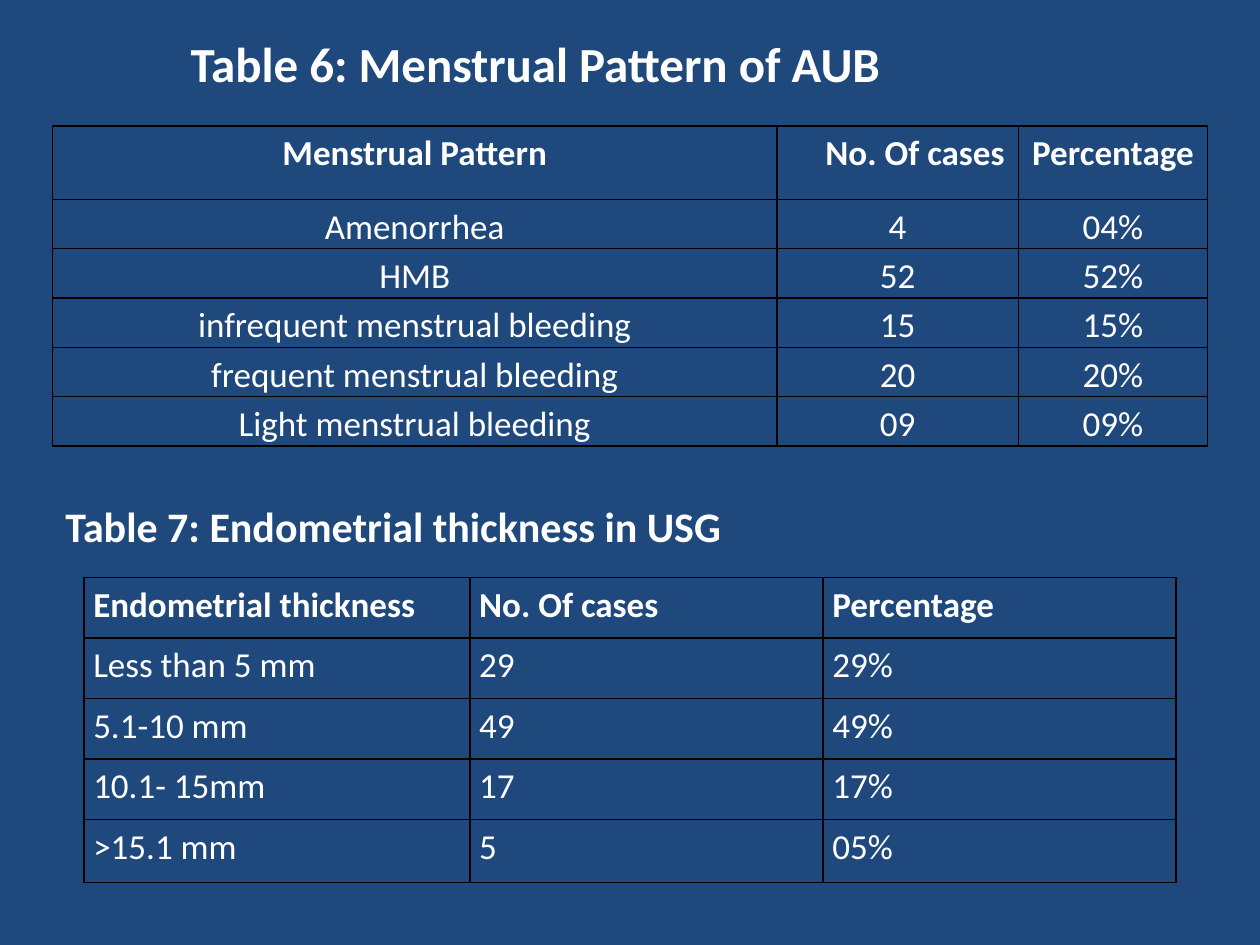
from lxml.etree import SubElement
from pptx import Presentation
from pptx.dml.color import RGBColor
from pptx.enum.text import MSO_ANCHOR, PP_ALIGN
from pptx.oxml.ns import qn
from pptx.util import Cm, Pt

HUES = {"back": "1F497D", "text": "FFFFFF", "line": "000000"}
FONT = "Calibri"
MARGINS = {"margin_left": Cm(0.19), "margin_right": Cm(0.19),
           "margin_top": 0, "margin_bottom": 0}
PATTERN = [
    ("Menstrual Pattern", "No. Of cases", "Percentage"),
    ("Amenorrhea", "4", "04%"),
    ("HMB", "52", "52%"),
    ("infrequent menstrual bleeding", "15", "15%"),
    ("frequent menstrual bleeding", "20", "20%"),
    ("Light menstrual bleeding", "09", "09%"),
]
THICKNESS = [
    ("Endometrial thickness", "No. Of cases", "Percentage"),
    ("Less than 5 mm", "29", "29%"),
    ("5.1-10 mm", "49", "49%"),
    ("10.1- 15mm", "17", "17%"),
    (">15.1 mm", "5", "05%"),
]


def apply(item, values):
    for name, value in values.items():
        setattr(item, name, value)


def write(frame, text, size, bold, **format):
    """Fill a text frame with one styled paragraph."""
    par = frame.paragraphs[0]
    apply(par, format)
    run = par.add_run()
    run.text = text
    apply(run.font, {"name": FONT, "size": Pt(size), "bold": bold})
    run.font.color.rgb = RGBColor.from_string(HUES["text"])


def place(shape, left, top, width, height):
    apply(shape, {"left": Cm(left), "top": Cm(top),
                  "width": Cm(width), "height": Cm(height)})


def border(cell):
    props = cell._tc.get_or_add_tcPr()
    for index, side in enumerate(("lnL", "lnR", "lnT", "lnB")):
        line = props.makeelement(qn(f"a:{side}"), {"w": str(Pt(1))})
        fill = SubElement(line, qn("a:solidFill"))
        SubElement(fill, qn("a:srgbClr"), val=HUES["line"])
        props.insert(index, line)


def add_grid(slide, data, left, top, widths, heights, align):
    frame = slide.shapes.add_table(len(data), len(widths), Cm(left), Cm(top),
                                   Cm(sum(widths)), Cm(sum(heights)))
    table = frame.table
    apply(table, {"first_row": False, "horz_banding": False})
    for column, width in zip(table.columns, widths):
        column.width = Cm(width)
    for r, (row, height) in enumerate(zip(table.rows, heights)):
        row.height = Cm(height)
        for cell, text in zip(row.cells, data[r]):
            apply(cell, MARGINS)
            cell.fill.background()
            border(cell)
            write(cell.text_frame, text, 20, r == 0,
                  alignment=align, line_spacing=1.15)
    return table


def add_title(slide, text):
    title = slide.shapes.title
    place(title, -0.64, 0, 22.86, 2.54)
    title.text_frame.vertical_anchor = MSO_ANCHOR.MIDDLE
    write(title.text_frame, text, 28, True, alignment=PP_ALIGN.CENTER)


def add_label(slide, text):
    box = slide.shapes.add_textbox(Cm(1.07), Cm(9.96), Cm(22.86), Cm(1.27))
    box.text_frame.word_wrap = True
    write(box.text_frame, text, 24, True)


def main():
    deck = Presentation()
    apply(deck, {"slide_width": Cm(25.4), "slide_height": Cm(19.05)})
    slide = deck.slides.add_slide(deck.slide_layouts[5])
    fill = slide.background.fill
    fill.solid()
    fill.fore_color.rgb = RGBColor.from_string(HUES["back"])

    add_title(slide, "Table 6: Menstrual Pattern of AUB")
    table = add_grid(slide, PATTERN, 1.06, 2.54, [14.6, 4.87, 3.81],
                     [1.48] + [0.94] * 5, PP_ALIGN.CENTER)
    cases = table.cell(0, 1)
    cases.margin_left = Cm(0.98)
    cases.text_frame.paragraphs[0].alignment = PP_ALIGN.LEFT

    add_label(slide, "Table 7: Endometrial thickness in USG")
    add_grid(slide, THICKNESS, 1.69, 11.64, [7.78, 7.12, 7.12],
             [1.22] * 4 + [1.27], PP_ALIGN.LEFT)
    deck.save("out.pptx")


if __name__ == "__main__":
    main()
